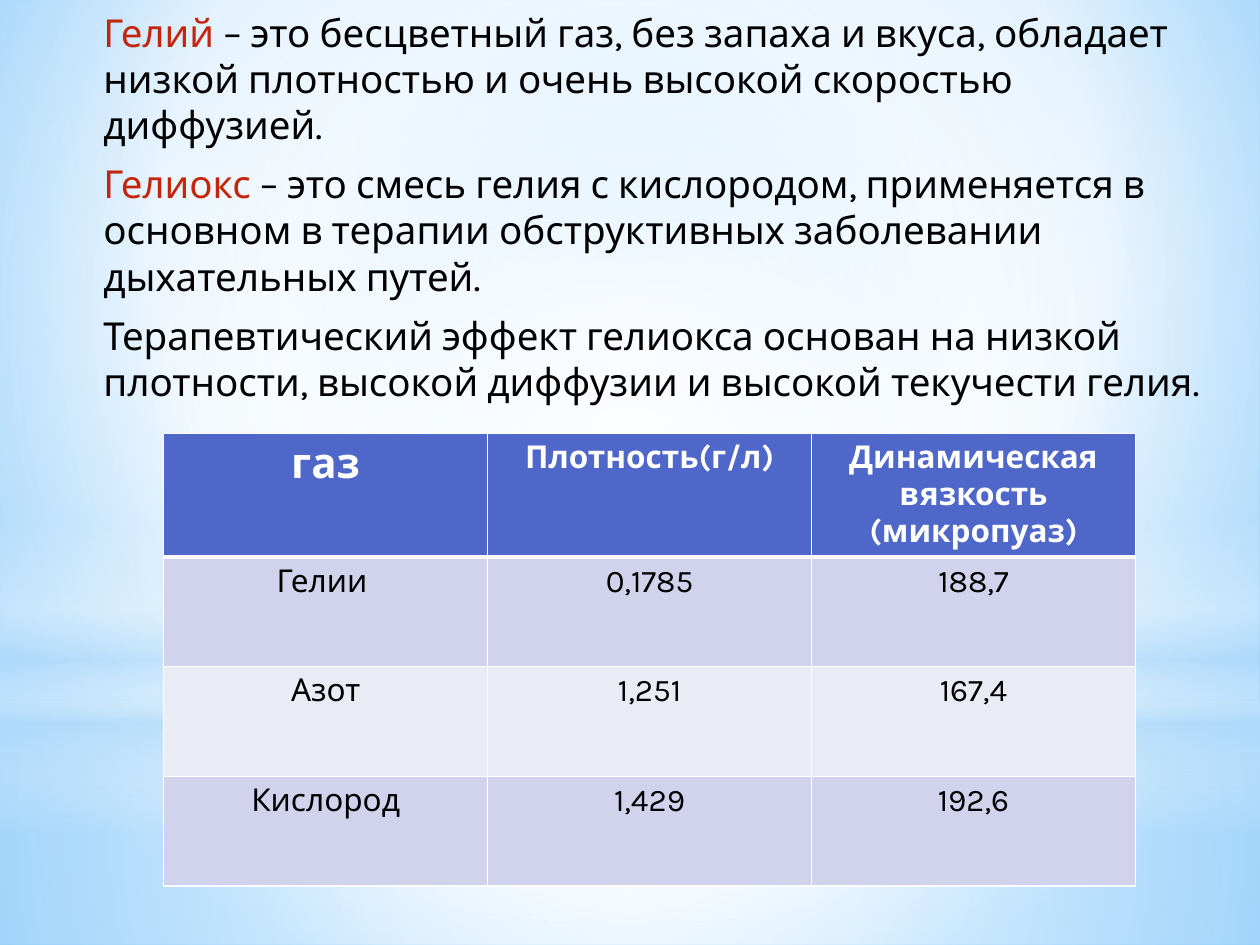
from dataclasses import dataclass

from lxml import etree
from pptx import Presentation
from pptx.dml.color import RGBColor
from pptx.enum.shapes import MSO_SHAPE
from pptx.enum.text import MSO_AUTO_SIZE, PP_ALIGN
from pptx.oxml.ns import qn
from pptx.util import Cm, Pt

RECTANGLE, OVAL = MSO_SHAPE.RECTANGLE, MSO_SHAPE.OVAL
CENTER = PP_ALIGN.CENTER
NO_AUTOFIT = MSO_AUTO_SIZE.NONE
TITLE_AND_CONTENT = 1


@dataclass(frozen=True)
class Theme:
    font: str = "Karla"
    text: str = "000000"
    term: str = "C3260C"
    white: str = "FFFFFF"
    header: str = "4E67C8"
    bands: tuple = ("D0D3EB", "E9EBF5")
    glow: str = "B4DCFA"
    sky: tuple = ("9ED5FF", "5BB9FF")
    body_size: int = 22
    gas_size: int = 24
    table_size: int = 18


THEME = Theme()
WIDTH, HEIGHT = Cm(25.4), Cm(19.05)
CENTERED = (50, 50, 50, 50)

DEFINITIONS = [
    ("Гелий ", "– это бесцветный газ, без запаха и вкуса, обладает низкой "
               "плотностью и очень высокой скоростью диффузией."),
    ("Гелиокс", " – это смесь гелия с кислородом, применяется в основном в "
                "терапии обструктивных заболевании дыхательных путей."),
    ("", "Терапевтический эффект гелиокса основан на низкой плотности, "
         "высокой диффузии и высокой текучести гелия."),
]
GASES = [
    ("газ", "Плотность(г/л)", "Динамическая вязкость (микропуаз)"),
    ("Гелии ", "0,1785", "188,7"),
    ("Азот", "1,251", "167,4"),
    ("Кислород", "1,429", "192,6"),
]


def style(run, size, color, bold=False):
    run.font.name = THEME.font
    run.font.size = Pt(size)
    run.font.bold = bold
    run.font.color.rgb = RGBColor.from_string(color)


def add_color(parent, color, opacity=100):
    node = etree.SubElement(parent, qn("a:srgbClr"), val=color)
    if opacity < 100:
        etree.SubElement(node, qn("a:alpha"), val=str(opacity * 1000))


def set_gradient(fill, properties, stops, focus=None):
    """Radial gradient around focus (left, top, right, bottom %), else vertical."""
    fill.solid()
    gradient = etree.Element(qn("a:gradFill"), rotWithShape="1")
    stop_list = etree.SubElement(gradient, qn("a:gsLst"))
    for position, color, opacity in stops:
        stop = etree.SubElement(stop_list, qn("a:gs"), pos=str(position * 1000))
        add_color(stop, color, opacity)
    if focus:
        radial = etree.SubElement(gradient, qn("a:path"), path="circle")
        sides = {side: str(share * 1000) for side, share in zip("ltrb", focus)}
        etree.SubElement(radial, qn("a:fillToRect"), **sides)
    else:
        etree.SubElement(gradient, qn("a:lin"), ang="5400000", scaled="0")
    properties.replace(properties.find(qn("a:solidFill")), gradient)


def add_glow(slide, kind, top, height, stops, focus=CENTERED):
    glow = slide.shapes.add_shape(kind, 0, Cm(top), WIDTH, Cm(height))
    glow.shadow.inherit = False
    glow.line.fill.background()
    set_gradient(glow.fill, glow.element.spPr, stops, focus)


def add_backdrop(slide):
    white, blue = THEME.white, THEME.glow
    inner, outer = THEME.sky
    background = slide.background.fill
    background.solid()
    set_gradient(background, slide.element.find(".//" + qn("p:bgPr")),
                 [(0, inner, 100), (60, white, 100), (100, outer, 100)],
                 (20, 10, 20, 60))
    # Lower and upper haze
    add_glow(slide, RECTANGLE, 14.17, 4.88,
             [(0, white, 91), (37, white, 76), (100, blue, 79)])
    add_glow(slide, RECTANGLE, 0, 14.17,
             [(0, white, 89), (48, white, 62), (100, blue, 79)])
    # Horizon band
    add_glow(slide, RECTANGLE, 10.46, 6.35,
             [(0, white, 0), (29, white, 30), (45, blue, 40),
              (55, white, 26), (65, blue, 60), (100, white, 0)], None)
    # Central light
    add_glow(slide, OVAL, 4.45, 14.17, [(0, white, 100), (56, white, 0)])


def fill_definitions(slide):
    body = slide.placeholders[1]
    slide.shapes.element.append(body.element)  # in front of the backdrop
    body.left, body.top, body.width, body.height = (
        Cm(1.7), Cm(0.05), Cm(23.19), Cm(18.01))
    frame = body.text_frame
    frame.auto_size = NO_AUTOFIT
    for index, (term, meaning) in enumerate(DEFINITIONS):
        paragraph = frame.add_paragraph() if index else frame.paragraphs[0]
        paragraph.space_after = Pt(3)
        properties = paragraph._p.get_or_add_pPr()
        properties.set("marL", str(Cm(0.13)))
        properties.set("indent", "0")
        etree.SubElement(properties, qn("a:buNone"))
        for text, color in ((term, THEME.term), (meaning, THEME.text)):
            if text:
                run = paragraph.add_run()
                run.text = text
                style(run, THEME.body_size, color)


def set_borders(cell, bottom_width):
    properties = cell._tc.get_or_add_tcPr()
    widths = {"a:lnL": 1, "a:lnR": 1, "a:lnT": 1, "a:lnB": bottom_width}
    for position, (tag, width) in enumerate(widths.items()):
        border = etree.Element(qn(tag), w=str(Pt(width)))
        add_color(etree.SubElement(border, qn("a:solidFill")), THEME.white)
        properties.insert(position, border)


def add_gas_table(slide):
    rows, columns = len(GASES), len(GASES[0])
    table = slide.shapes.add_table(rows, columns, Cm(3.3), Cm(8.74),
                                   Cm(19.6), Cm(8.81)).table
    for column in table.columns:
        column.width = Cm(6.53)
    for number, (row, texts) in enumerate(zip(table.rows, GASES)):
        is_header = number == 0
        row.height = Cm(2.18 if is_header else 2.21)
        band = THEME.header if is_header else THEME.bands[(number - 1) % 2]
        color = THEME.white if is_header else THEME.text
        for column, (cell, text) in enumerate(zip(row.cells, texts)):
            cell.fill.solid()
            cell.fill.fore_color.rgb = RGBColor.from_string(band)
            set_borders(cell, 3 if is_header else 1)
            paragraph = cell.text_frame.paragraphs[0]
            paragraph.text = text
            paragraph.alignment = CENTER
            is_gas_heading = is_header and column == 0
            size = THEME.gas_size if is_gas_heading else THEME.table_size
            style(paragraph.runs[0], size, color, is_header)


def main():
    presentation = Presentation()
    presentation.slide_width, presentation.slide_height = WIDTH, HEIGHT
    layout = presentation.slide_layouts[TITLE_AND_CONTENT]
    slide = presentation.slides.add_slide(layout)
    title = slide.shapes.title.element
    title.getparent().remove(title)  # this slide has no title
    add_backdrop(slide)
    fill_definitions(slide)
    add_gas_table(slide)
    presentation.save("out.pptx")


if __name__ == "__main__":
    main()
